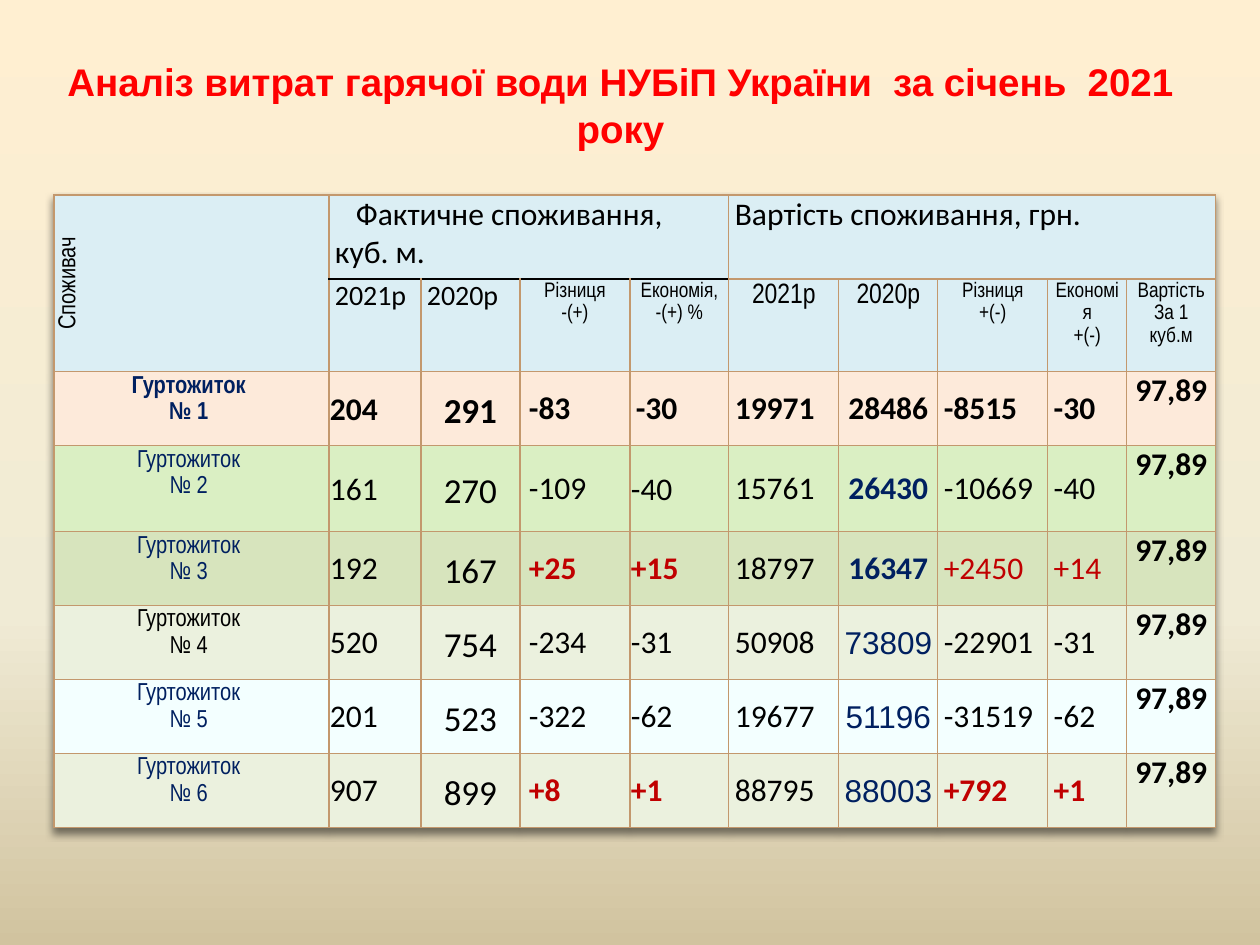
from copy import deepcopy
from dataclasses import dataclass

from lxml import etree
from pptx import Presentation
from pptx.dml.color import RGBColor
from pptx.enum.text import MSO_ANCHOR, MSO_AUTO_SIZE, PP_ALIGN
from pptx.oxml.ns import qn
from pptx.util import Emu, Pt

LEFT, CENTER = PP_ALIGN.LEFT, PP_ALIGN.CENTER
TOP, MIDDLE = MSO_ANCHOR.TOP, MSO_ANCHOR.MIDDLE

PX_PER_INCH = 126
BLACK, NAVY, RED = "000000", "002060", "C00000"
HEADER_FILL, BORDER = "DBEEF4", "C3986D"
NARROW, CALIBRI, ARIAL = "Arial Narrow", "Calibri", "Arial"

COLUMN_WIDTHS = [275, 92, 99, 110, 99, 110, 99, 110, 79, 89]
ROW_HEIGHTS = [84, 72, 74, 86, 74, 74, 74, 74]
NAME, DIFF_PERCENT, PREVIOUS_COST, UNIT_PRICE = 0, 4, 6, 9


@dataclass(frozen=True)
class Style:
    size: int
    font: str = CALIBRI
    align: PP_ALIGN = LEFT
    anchor: MSO_ANCHOR = TOP
    inset: int = 6
    spacing: float = 1.0


@dataclass(frozen=True)
class Heading:
    row: int
    column: int
    text: str
    style: Style
    last_row: int
    last_column: int


@dataclass(frozen=True)
class Dormitory:
    number: int
    fill: str
    values: str
    bold_columns: set[int]
    name_colour: str = NAVY
    cost_font: str = ARIAL


# Text styles of the table parts
GROUP = Style(18)
YEAR = Style(16)
COST_YEAR = Style(16, NARROW, CENTER, spacing=1.15)
NOTE = Style(12, NARROW, CENTER, spacing=1.15)
CONSUMER = Style(14, NARROW, CENTER, MIDDLE, spacing=1.15)
DORMITORY_NAME = Style(14, NARROW, CENTER, spacing=1.15)
USAGE = Style(18, anchor=MIDDLE, inset=1)
PREVIOUS_USAGE = Style(20, CALIBRI, CENTER, MIDDLE, 9, 1.15)
DIFFERENCE = Style(18, anchor=MIDDLE, inset=9)
COST = Style(18, anchor=MIDDLE)
PRICE = Style(18, align=CENTER)
COLUMN_STYLES = [DORMITORY_NAME, USAGE, PREVIOUS_USAGE, DIFFERENCE, USAGE,
                 COST, COST, COST, COST, PRICE]

GROUP_HEADINGS = [
    Heading(0, 0, "Споживач", CONSUMER, 1, 0),
    Heading(0, 1, "Фактичне споживання, куб. м.", GROUP, 0, 4),
    Heading(0, 5, "Вартість споживання, грн.", GROUP, 0, 9),
]
SUBHEADINGS = [
    ("2021р", YEAR), ("2020р", YEAR),
    ("Різниця\n-(+)", NOTE), ("Економія,\n-(+) %", NOTE),
    ("2021р", COST_YEAR), ("2020р", COST_YEAR),
    ("Різниця\n+(-)", NOTE), ("Економія\n+(-)", NOTE),
    ("Вартість\nЗа 1 куб.м", NOTE),
]
DORMITORIES = [
    Dormitory(1, "FDEADA", "204 291 -83 -30 19971 28486 -8515 -30 97,89",
              set(range(10)), cost_font=CALIBRI),
    Dormitory(2, "DAEFC3", "161 270 -109 -40 15761 26430 -10669 -40 97,89",
              {6, 9}, cost_font=CALIBRI),
    Dormitory(3, "D7E4BD", "192 167 +25 +15 18797 16347 +2450 +14 97,89",
              {3, 4, 6, 9}, cost_font=CALIBRI),
    Dormitory(4, "EBF1DE", "520 754 -234 -31 50908 73809 -22901 -31 97,89",
              {9}, name_colour=BLACK),
    Dormitory(5, "F3FFFF", "201 523 -322 -62 19677 51196 -31519 -62 97,89", {9}),
    Dormitory(6, "EBF1DE", "907 899 +8 +1 88795 88003 +792 +1 97,89",
              {3, 4, 7, 8, 9}),
]


def px(length: int) -> Emu:
    return Emu(round(length * 914400 / PX_PER_INCH))


def colour(value: str) -> RGBColor:
    return RGBColor.from_string(value)


def format_text(frame, style: Style, text_colour: str, bold: bool) -> None:
    for paragraph in frame.paragraphs:
        paragraph.alignment = style.align
        paragraph.line_spacing = style.spacing
        for run in paragraph.runs:
            run.font.size = Pt(style.size)
            run.font.name = style.font
            run.font.bold = bold
            run.font.color.rgb = colour(text_colour)


def set_border(cell, side: str, line_colour: str, width: float) -> None:
    line = etree.SubElement(cell._tc.get_or_add_tcPr(), qn(f"a:ln{side}"),
                            w=str(Pt(width)))
    fill = etree.SubElement(line, qn("a:solidFill"))
    etree.SubElement(fill, qn("a:srgbClr"), val=line_colour)


def fill_cell(cell, text: str, style: Style, fill: str,
              text_colour: str = BLACK, bold: bool = False) -> None:
    cell.text_frame.text = text
    format_text(cell.text_frame, style, text_colour, bold)
    cell.vertical_anchor = style.anchor
    cell.margin_left = cell.margin_right = px(style.inset)
    cell.margin_top = px(1 if style.inset == 1 else 0)
    cell.margin_bottom = 0
    cell.fill.solid()
    cell.fill.fore_color.rgb = colour(fill)


def draw_background(slide) -> None:
    fill = slide.background.fill
    fill.gradient()
    fill.gradient_angle = 270
    stop_list = slide.background._cSld.find(".//" + qn("a:gsLst"))
    stop_list.append(deepcopy(stop_list[-1]))
    shades = [(0, "FFEFD1"), (0.65, "F0EBD5"), (1, "D1C39F")]
    for stop, (position, shade) in zip(fill.gradient_stops, shades):
        stop.position = position
        stop.color.rgb = colour(shade)


def draw_title(slide) -> None:
    title = slide.shapes.title
    title.left, title.top, title.width, title.height = map(px, (25, 26, 1191, 203))
    frame = title.text_frame
    frame.text = "Аналіз витрат гарячої води НУБіП України  за січень  2021 року"
    frame.word_wrap = True
    frame.auto_size = MSO_AUTO_SIZE.NONE
    frame.vertical_anchor = MIDDLE
    frame.margin_bottom = px(52)
    format_text(frame, Style(22, ARIAL, CENTER), "FF0000", True)


def add_table_shadow(table) -> None:
    effects = etree.Element(qn("a:effectLst"))
    shadow = etree.SubElement(effects, qn("a:outerShdw"), blurRad="50800",
                              dist="38100", dir="5400000", rotWithShape="0")
    black = etree.SubElement(shadow, qn("a:srgbClr"), val=BLACK)
    etree.SubElement(black, qn("a:alpha"), val="50000")
    table._tbl.tblPr.insert(0, effects)


def draw_borders(table) -> None:
    for row in range(len(ROW_HEIGHTS)):
        for column in range(len(COLUMN_WIDTHS)):
            for side in "LRTB":
                under_usage = (row, side) in ((0, "B"), (1, "T")) and 1 <= column <= 4
                line = (BLACK, 1) if under_usage else (BORDER, 0.79)
                set_border(table.cell(row, column), side, *line)


def draw_headings(table) -> None:
    for heading in GROUP_HEADINGS:
        cell = table.cell(heading.row, heading.column)
        cell.merge(table.cell(heading.last_row, heading.last_column))
        fill_cell(cell, heading.text, heading.style, HEADER_FILL)
    for column, (text, style) in enumerate(SUBHEADINGS, start=1):
        fill_cell(table.cell(1, column), text, style, HEADER_FILL)
    # Vertical consumer heading and first-line indent of the usage heading
    table.cell(0, 0)._tc.get_or_add_tcPr().set("vert", "vert270")
    usage = table.cell(0, 1).text_frame.paragraphs[0]
    usage._p.get_or_add_pPr().set("indent", str(px(21)))


def draw_dormitory(table, row: int, dormitory: Dormitory) -> None:
    name = f"Гуртожиток \v№ {dormitory.number} "
    for column, text in enumerate([name, *dormitory.values.split()]):
        style = COLUMN_STYLES[column]
        text_colour = RED if text.startswith("+") else BLACK
        if column == NAME:
            text_colour = dormitory.name_colour
        elif column == DIFF_PERCENT and dormitory.number == 1:
            style = COST
        elif column == PREVIOUS_COST:
            inset = 1 if dormitory.cost_font == ARIAL else 6
            style = Style(18, dormitory.cost_font, CENTER, MIDDLE, inset)
            text_colour = BLACK if dormitory.number == 1 else NAVY
        fill_cell(table.cell(row, column), text, style, dormitory.fill,
                  text_colour, column in dormitory.bold_columns)


def draw_table(slide) -> None:
    table = slide.shapes.add_table(
        len(ROW_HEIGHTS), len(COLUMN_WIDTHS), px(54), px(195),
        px(sum(COLUMN_WIDTHS)), px(sum(ROW_HEIGHTS))).table
    table.first_row = table.horz_banding = False
    for column, width in zip(table.columns, COLUMN_WIDTHS):
        column.width = px(width)
    for row, height in zip(table.rows, ROW_HEIGHTS):
        row.height = px(height)
    add_table_shadow(table)
    draw_borders(table)
    draw_headings(table)
    for row, dormitory in enumerate(DORMITORIES, start=2):
        draw_dormitory(table, row, dormitory)


def main() -> None:
    deck = Presentation()
    deck.slide_width, deck.slide_height = px(1260), px(945)
    slide = deck.slides.add_slide(deck.slide_layouts[0])
    subtitle = slide.placeholders[1].element
    subtitle.getparent().remove(subtitle)
    draw_background(slide)
    draw_title(slide)
    draw_table(slide)
    deck.save("out.pptx")


if __name__ == "__main__":
    main()
